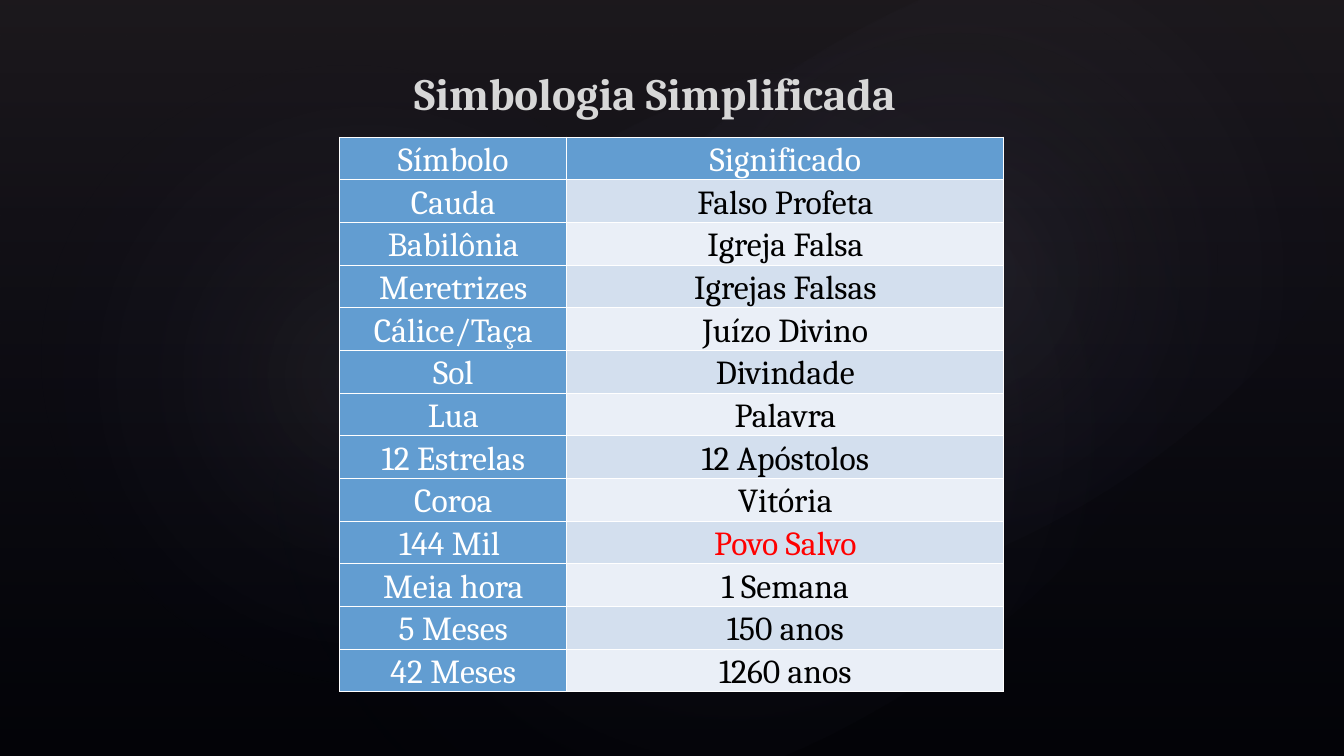
from lxml import etree
from pptx import Presentation
from pptx.dml.color import RGBColor
from pptx.enum.shapes import MSO_SHAPE
from pptx.enum.text import MSO_ANCHOR, MSO_AUTO_SIZE, PP_ALIGN
from pptx.oxml import parse_xml
from pptx.oxml.ns import nsdecls, qn
from pptx.util import Pt

BLACK = RGBColor(0x00, 0x00, 0x00)
WHITE = RGBColor(0xFF, 0xFF, 0xFF)
RED = RGBColor(0xFF, 0x00, 0x00)
BLUE = RGBColor(0x62, 0x9D, 0xD1)
BAND_DARK = RGBColor(0xD3, 0xDF, 0xEE)
BAND_LIGHT = RGBColor(0xEA, 0xEF, 0xF7)
PLUM = RGBColor(0x50, 0x46, 0x52)
NAVY = RGBColor(0x24, 0x28, 0x52)
MIST = RGBColor(0xC4, 0xBC, 0xC6)
GREY = RGBColor(0x97, 0x97, 0x97)
SILVER = RGBColor(0xD7, 0xD7, 0xD7)

VERTICAL = '<a:lin ang="5400000" scaled="0"/>'
RADIAL = ('<a:path path="circle"><a:fillToRect l="50000" t="50000" '
          'r="50000" b="50000"/></a:path>')

WIDTH, HEIGHT = 960, 540

# left, top, width, height, rotation, opacity at the centre
GLOWS = [
    (144, 82.1, 760.3, 449.3, 328.7, 7),
    (43.9, 33.1, 436.3, 470.2, 294.3, 8),
    (344.2, 9.4, 680.4, 374.4, 328.7, 8),
]

SYMBOLS = [
    ("Símbolo", "Significado"),
    ("Cauda", "Falso Profeta"),
    ("Babilônia", "Igreja Falsa"),
    ("Meretrizes", "Igrejas Falsas"),
    ("Cálice/Taça", "Juízo Divino"),
    ("Sol", "Divindade"),
    ("Lua", "Palavra"),
    ("12 Estrelas", "12 Apóstolos"),
    ("Coroa", "Vitória"),
    ("144 Mil ", "Povo Salvo"),
    ("Meia hora", "1 Semana"),
    ("5 Meses", "150 anos"),
    ("42 Meses", "1260 anos"),
]
HIGHLIGHT = "Povo Salvo"


def gradient(stops, direction):
    """Return a gradFill element; each stop is (position %, colour, opacity %)."""
    marks = "".join(
        f'<a:gs pos="{pos * 1000}"><a:srgbClr val="{color}">'
        f'<a:alpha val="{opacity * 1000}"/></a:srgbClr></a:gs>'
        for pos, color, opacity in stops)
    return parse_xml(f'<a:gradFill {nsdecls("a")} rotWithShape="1">'
                     f'<a:gsLst>{marks}</a:gsLst>{direction}</a:gradFill>')


class SlideBuilder:
    """Holds the text style and the slide being built."""

    font = "Cambria"
    title_size = Pt(32)
    cell_size = Pt(24)

    def __init__(self, slide):
        self.slide = slide

    def background(self, color):
        fill = self.slide.background.fill
        fill.solid()
        fill.fore_color.rgb = color

    def gradient_shape(self, kind, box, stops, direction, rotation=0):
        s = self.slide.shapes.add_shape(kind, *map(Pt, box))
        s.rotation = rotation
        s.shadow.inherit = False
        s.line.fill.background()
        s.fill.background()
        no_fill = s._element.spPr.find(qn("a:noFill"))
        no_fill.getparent().replace(no_fill, gradient(stops, direction))

    def title(self, text, box, stops):
        tf = self.slide.shapes.add_textbox(*map(Pt, box)).text_frame
        tf.word_wrap = False
        tf.auto_size = MSO_AUTO_SIZE.SHAPE_TO_FIT_TEXT
        p = tf.paragraphs[0]
        r = p.add_run()
        r.text = text
        p.font.name, p.font.size, p.font.bold = self.font, self.title_size, True
        r._r.get_or_add_rPr().insert(0, gradient(stops, VERTICAL))

    def cell(self, cell, text, fill, color, inset):
        cell.vertical_anchor = MSO_ANCHOR.BOTTOM
        cell.margin_left = cell.margin_right = Pt(inset)
        cell.margin_top = cell.margin_bottom = 0
        tcPr = cell._tc.get_or_add_tcPr()
        for side in ("lnL", "lnR", "lnT", "lnB"):
            ln = etree.SubElement(tcPr, qn(f"a:{side}"), w=str(Pt(1)))
            solid = etree.SubElement(ln, qn("a:solidFill"))
            etree.SubElement(solid, qn("a:srgbClr"), val=str(WHITE))
        cell.fill.solid()
        cell.fill.fore_color.rgb = fill
        p = cell.text_frame.paragraphs[0]
        p.text = text
        p.alignment = PP_ALIGN.CENTER
        p.font.name, p.font.size = self.font, self.cell_size
        p.font.color.rgb = color

    def symbol_table(self, rows, left, top, col_widths, row_height):
        table = self.slide.shapes.add_table(
            len(rows), len(col_widths), Pt(left), Pt(top),
            Pt(sum(col_widths)), Pt(row_height * len(rows))).table
        table.first_row = table.horz_banding = False
        for column, width in zip(table.columns, col_widths):
            column.width = Pt(width)
        for i, (row, values) in enumerate(zip(table.rows, rows)):
            row.height = Pt(row_height)
            for j, text in enumerate(values):
                if i == 0 or j == 0:
                    fill, color = BLUE, WHITE
                else:
                    fill = BAND_DARK if i % 2 else BAND_LIGHT
                    color = RED if text == HIGHLIGHT else BLACK
                self.cell(row.cells[j], text, fill, color, 3.6 if i else 2.9)


def main():
    prs = Presentation()
    prs.slide_width, prs.slide_height = Pt(WIDTH), Pt(HEIGHT)
    sb = SlideBuilder(prs.slides.add_slide(prs.slide_layouts[6]))
    sb.background(BLACK)
    sb.gradient_shape(MSO_SHAPE.RECTANGLE, (0, 0, WIDTH, HEIGHT),
                      [(0, PLUM, 36), (100, NAVY, 10)], VERTICAL)
    for *box, rotation, opacity in GLOWS:
        sb.gradient_shape(MSO_SHAPE.OVAL, box,
                          [(0, MIST, opacity), (58, NAVY, 0)], RADIAL, rotation)
    sb.title("Simbologia Simplificada", (288.7, 43.2, 383, 46),
             [(0, GREY, 100), (26, SILVER, 100), (100, WHITE, 100)])
    sb.symbol_table(SYMBOLS, 242.8, 98, (162, 312.3), 30.5)
    prs.save("out.pptx")


if __name__ == "__main__":
    main()
